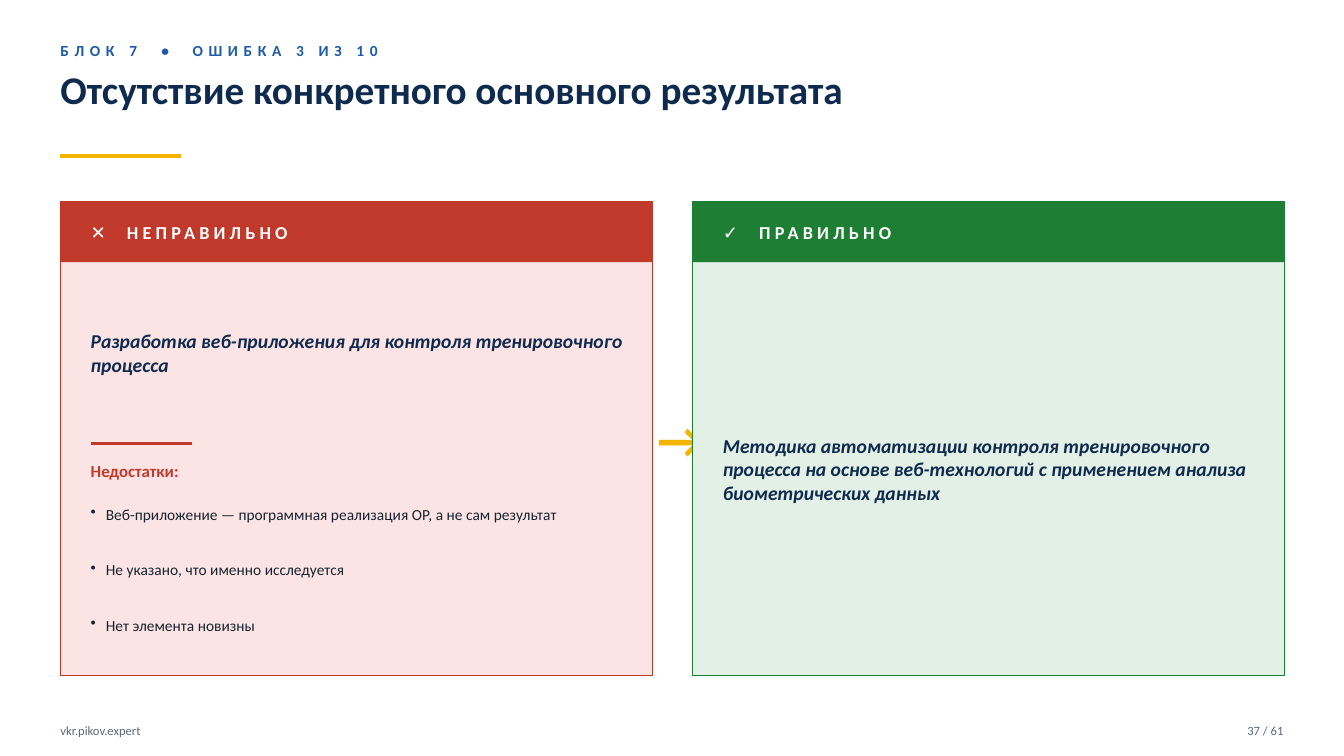
import pptx
import pptx.dml.color
import pptx.enum.shapes
import pptx.enum.text
import pptx.oxml.ns
import pptx.util
from lxml import etree
from pptx.util import Inches

COLORS = {
    "navy": "0F2A4F", "blue": "1E5AA7", "gold": "F4B400", "ink": "16242F",
    "gray": "5C6B7A", "white": "FFFFFF", "red": "C0392B", "pink": "FCE4E4",
    "green": "1E7E34", "mint": "E2F0E5",
}
ALIGN = pptx.enum.text.PP_ALIGN
ANCHOR = pptx.enum.text.MSO_ANCHOR
MARGIN, CONTENT_WIDTH = 0.6, 12.13
CARD_TOP, CARD_WIDTH, CARD_HEIGHT, HEADER_HEIGHT = 2, 5.87, 4.7, 0.6
PADDING, INNER_WIDTH = 0.3, 5.37
BULLET_INDENT = Inches(0.15)

deck = pptx.Presentation()
deck.slide_width, deck.slide_height = Inches(13.33), Inches(7.5)
slide = deck.slides.add_slide(deck.slide_layouts[6])


def rgb(name):
    return pptx.dml.color.RGBColor.from_string(COLORS[name])


def add_text(box, text, size, color, align=ALIGN.LEFT, anchor=ANCHOR.MIDDLE,
             spacing=0, tabs=(), bullet=False, **styles):
    """Place one paragraph; box and tabs in inches, letter spacing in points."""
    frame = slide.shapes.add_textbox(*map(Inches, box)).text_frame
    frame_format = {"word_wrap": True, "vertical_anchor": anchor, "margin_left": 0,
                    "margin_right": 0, "margin_top": 0, "margin_bottom": 0}
    for name, value in frame_format.items():
        setattr(frame, name, value)
    paragraph = frame.paragraphs[0]
    paragraph.alignment = align
    properties = paragraph._p.get_or_add_pPr()
    if bullet:
        properties.set("marL", str(BULLET_INDENT))
        properties.set("indent", str(-BULLET_INDENT))
        etree.SubElement(properties, pptx.oxml.ns.qn("a:buChar"), char="•")
    if tabs:
        stops = etree.SubElement(properties, pptx.oxml.ns.qn("a:tabLst"))
        for stop in tabs:
            etree.SubElement(stops, pptx.oxml.ns.qn("a:tab"),
                             pos=str(Inches(stop)), algn="l")
    run = paragraph.add_run()
    run.text = text
    for name, value in {"name": "Calibri", "size": pptx.util.Pt(size), **styles}.items():
        setattr(run.font, name, value)
    run.font.color.rgb = rgb(color)
    if spacing:
        run._r.get_or_add_rPr().set("spc", str(spacing * 100))


# Heading
add_text((MARGIN, 0.35, 6, 0.3), "БЛОК 7\t•\tОШИБКА 3 ИЗ 10", 11, "blue",
         spacing=4, tabs=(1, 1.31), bold=True)
add_text((MARGIN, 0.65, CONTENT_WIDTH, 0.85), "Отсутствие конкретного основного результата",
         28, "navy", anchor=ANCHOR.TOP, bold=True)

# Accent rules under the title and above the list of flaws
for left, top, length, color, weight in (
    (MARGIN, 1.55, 1.2, "gold", 3),
    (MARGIN + PADDING, 4.4, 1, "red", 2),
):
    rule = slide.shapes.add_connector(
        pptx.enum.shapes.MSO_CONNECTOR.STRAIGHT,
        Inches(left), Inches(top), Inches(left + length), Inches(top))
    rule.line.color.rgb = rgb(color)
    rule.line.width = pptx.util.Pt(weight)
    etree.SubElement(rule._element.spPr, pptx.oxml.ns.qn("a:effectLst"))
    accent = rule._element
    if color == "red":
        flaws_rule = accent

add_text((6.52, 4, 0.3, 0.7), "→", 36, "gold", align=ALIGN.CENTER, bold=True)

# Wrong and right cards
for left, header, topic, topic_height, strong, pale in (
    (MARGIN, "✕\tНЕПРАВИЛЬНО",
     "Разработка веб-приложения для контроля тренировочного процесса",
     1.4, "red", "pink"),
    (6.87, "✓\tПРАВИЛЬНО",
     "Методика автоматизации контроля тренировочного процесса на основе "
     "веб-технологий с применением анализа биометрических данных",
     3.7, "green", "mint"),
):
    for height, fill in ((CARD_HEIGHT, pale), (HEADER_HEIGHT, strong)):
        panel = slide.shapes.add_shape(
            pptx.enum.shapes.MSO_SHAPE.RECTANGLE,
            Inches(left), Inches(CARD_TOP), Inches(CARD_WIDTH), Inches(height))
        panel.shadow.inherit = False
        panel.fill.solid()
        panel.fill.fore_color.rgb = rgb(fill)
        if fill == pale:
            panel.line.color.rgb = rgb(strong)
            panel.line.width = pptx.util.Pt(1)
        else:
            panel.line.fill.background()
    text_left = left + PADDING
    add_text((text_left, CARD_TOP, INNER_WIDTH, HEADER_HEIGHT), header, 13, "white",
             spacing=3, tabs=(0.36,), bold=True)
    add_text((text_left, 2.8, INNER_WIDTH, topic_height), topic, 14, "navy",
             bold=True, italic=True)

# Flaws of the wrong wording, in front of its card
slide.shapes._spTree.append(flaws_rule)
flaws_left = MARGIN + PADDING
add_text((flaws_left, 4.5, INNER_WIDTH, 0.35), "Недостатки:", 12, "red", bold=True)
for index, flaw in enumerate((
    "Веб-приложение — программная реализация ОР, а не сам результат",
    "Не указано, что именно исследуется",
    "Нет элемента новизны",
)):
    add_text((flaws_left, 4.85 + 0.55 * index, INNER_WIDTH, 0.5), flaw, 11, "ink",
             bullet=True)

# Footer
add_text((MARGIN, 7.1, 4, 0.3), "vkr.pikov.expert", 9, "gray")
add_text((11.73, 7.1, 1, 0.3), "37 / 61", 9, "gray", align=ALIGN.RIGHT)

deck.save("out.pptx")
